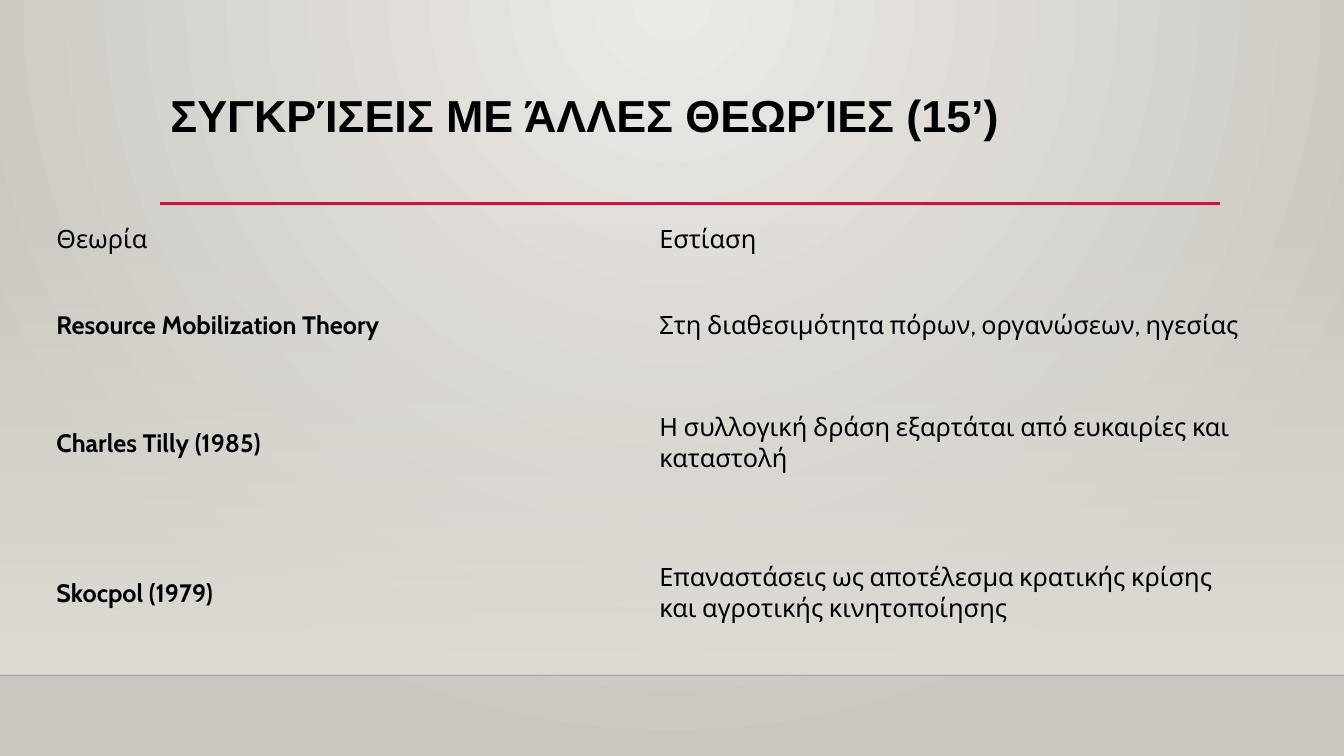
from dataclasses import dataclass

from lxml.etree import _Element
from pptx import Presentation
from pptx.dml.color import RGBColor
from pptx.dml.fill import FillFormat
from pptx.enum.shapes import MSO_CONNECTOR, MSO_SHAPE
from pptx.enum.text import MSO_ANCHOR, PP_ALIGN
from pptx.oxml import parse_xml
from pptx.oxml.ns import nsdecls, qn
from pptx.slide import Slide
from pptx.text.text import TextFrame
from pptx.util import Inches, Pt

BLACK = RGBColor(0, 0, 0)
EDGE = RGBColor(0, 0, 1)
RED = RGBColor(0xB7, 0x1E, 0x42)
LIGHT = RGBColor(0xEC, 0xEA, 0xE7)
GRAY = RGBColor(0xCA, 0xC7, 0xC1)
SAND = RGBColor(0xDF, 0xDB, 0xD5)
WIDTH, HEIGHT = 13.33, 7.5
FLOOR = 6.7
PLAIN = "{2D5ABB26-0587-4C30-8999-92F81FD0307C}"


@dataclass
class Rule:
    left: float
    right: float
    top: float
    color: RGBColor
    width: float
    alpha: int = 100


@dataclass
class Entry:
    theory: str
    focus: str
    height: float
    bold: bool = True


RULES = [
    Rule(0, WIDTH, FLOOR, EDGE, 1, 20),
    Rule(1.59, 12.1, 2.02, RED, 2.5),
]
ENTRIES = [
    Entry("Θεωρία", "Εστίαση", 0.85, False),
    Entry("Resource Mobilization Theory",
          "Στη διαθεσιμότητα πόρων, οργανώσεων, ηγεσίας", 0.85),
    Entry("Charles Tilly (1985)",
          "Η συλλογική δράση εξαρτάται από ευκαιρίες και καταστολή", 1.49),
    Entry("Skocpol (1979)",
          "Επαναστάσεις ως αποτέλεσμα κρατικής κρίσης και αγροτικής κινητοποίησης", 1.49),
]


def fade(color: _Element, alpha: int) -> None:
    """Set the opacity of a colour element in percent."""
    color.append(parse_xml(f'<a:alpha {nsdecls("a")} val="{alpha * 1000}"/>'))


def blend(fill: FillFormat, first: RGBColor, last: RGBColor) -> None:
    """Give a fill a gradient of two colours."""
    fill.gradient()
    for stop, color, place in zip(fill.gradient_stops, (first, last), (0, 1)):
        stop.color.rgb = color
        stop.position = place


def add_ground(slide: Slide) -> None:
    """Draw the round background glow and the wall that fades in downward."""
    fill = slide.background.fill
    blend(fill, LIGHT, GRAY)
    grad = next(slide.element.iter(qn("a:gradFill")))
    grad.replace(grad.find(qn("a:lin")), parse_xml(
        f'<a:path {nsdecls("a")} path="circle">'
        '<a:fillToRect l="43000" t="0" r="43000" b="100000"/></a:path>'))
    top = 2.21
    wall = slide.shapes.add_shape(MSO_SHAPE.RECTANGLE, Inches(0), Inches(top),
                                  Inches(WIDTH), Inches(FLOOR - top))
    wall.shadow.inherit = False
    wall.line.fill.background()
    blend(wall.fill, SAND, SAND)
    wall.fill.gradient_angle = 270
    colors = wall.element.spPr.iter(qn("a:srgbClr"))
    for color, alpha in zip(list(colors), (0, 100)):
        fade(color, alpha)


def add_rule(slide: Slide, rule: Rule) -> None:
    """Draw one level line."""
    line = slide.shapes.add_connector(
        MSO_CONNECTOR.STRAIGHT, Inches(rule.left), Inches(rule.top),
        Inches(rule.right), Inches(rule.top))
    line.line.color.rgb = rule.color
    line.line.width = Pt(rule.width)
    props = line.element.spPr
    if rule.alpha < 100:
        fade(next(props.iter(qn("a:srgbClr"))), rule.alpha)
    props.append(parse_xml(f'<a:effectLst {nsdecls("a")}/>'))


def add_text(frame: TextFrame, text: str, face: str, size: int, bold: bool) -> None:
    """Write one run of black text, flush left."""
    para = frame.paragraphs[0]
    para.alignment = PP_ALIGN.LEFT
    run = para.add_run()
    run.text = text
    font = run.font
    font.name, font.size, font.bold = face, Pt(size), bold
    font.color.rgb = BLACK


def add_title(slide: Slide) -> None:
    """Place and fill the title."""
    title = slide.shapes.title
    title.left, title.top = Inches(1.59), Inches(0.88)
    title.width, title.height = Inches(10.5), Inches(1.15)
    frame = title.text_frame
    frame.word_wrap = True
    frame.vertical_anchor = MSO_ANCHOR.TOP
    add_text(frame, "ΣΥΓΚΡΊΣΕΙΣ ΜΕ ΆΛΛΕΣ ΘΕΩΡΊΕΣ (15’)", "Arial", 32, True)
    frame.paragraphs[0].line_spacing = 0.9


def add_grid(slide: Slide) -> None:
    """Build the table of theories."""
    total = sum(entry.height for entry in ENTRIES)
    table = slide.shapes.add_table(
        len(ENTRIES), 2, Inches(0.46), Inches(1.95), Inches(11.96), Inches(total)).table
    table.first_row = table.horz_banding = False
    next(table._tbl.iter(qn("a:tableStyleId"))).text = PLAIN
    for row, entry in zip(table.rows, ENTRIES):
        row.height = Inches(entry.height)
        pairs = ((entry.theory, entry.bold), (entry.focus, False))
        for cell, (text, bold) in zip(row.cells, pairs):
            cell.fill.background()
            cell.vertical_anchor = MSO_ANCHOR.MIDDLE
            add_text(cell.text_frame, text, "Cabin", 18, bold)


def main() -> None:
    """Build and save the slide."""
    deck = Presentation()
    deck.slide_width, deck.slide_height = Inches(WIDTH), Inches(HEIGHT)
    slide = deck.slides.add_slide(deck.slide_layouts[5])
    add_ground(slide)
    for rule in RULES:
        add_rule(slide, rule)
    add_title(slide)
    add_grid(slide)
    deck.save("out.pptx")


if __name__ == "__main__":
    main()
